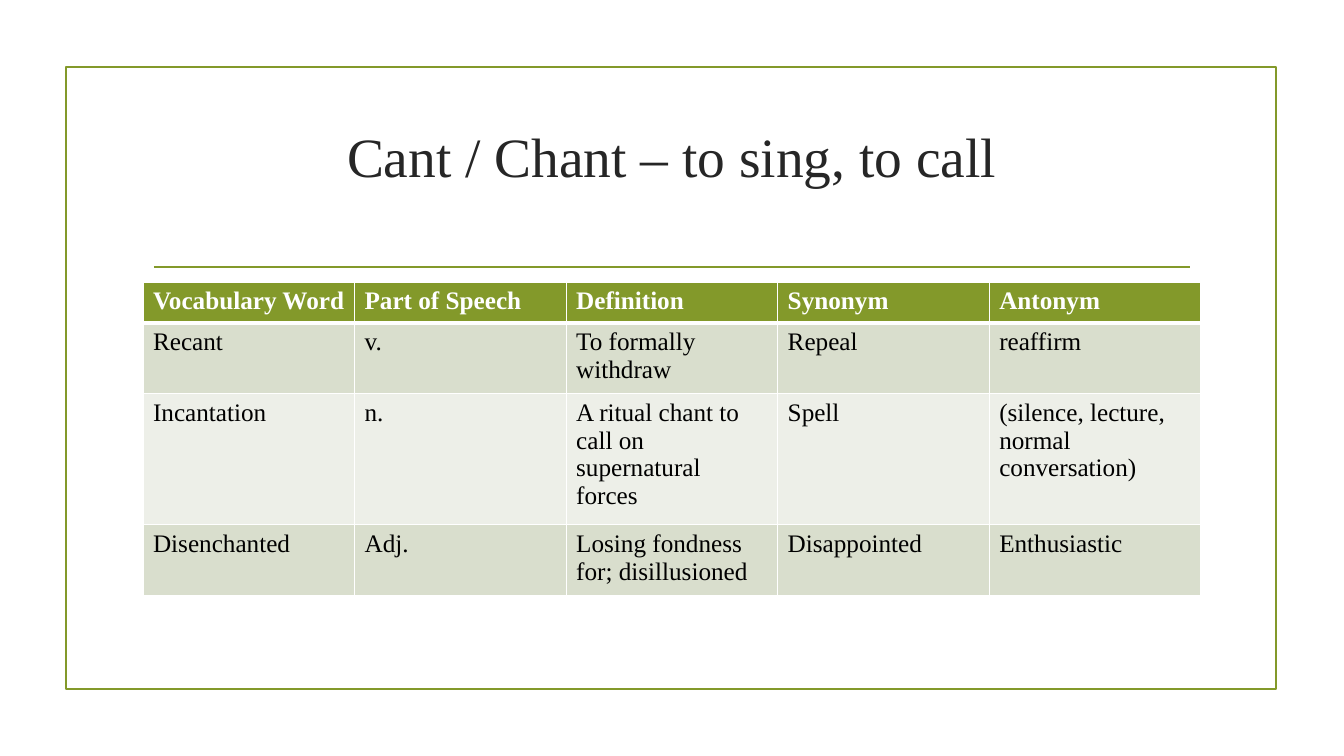
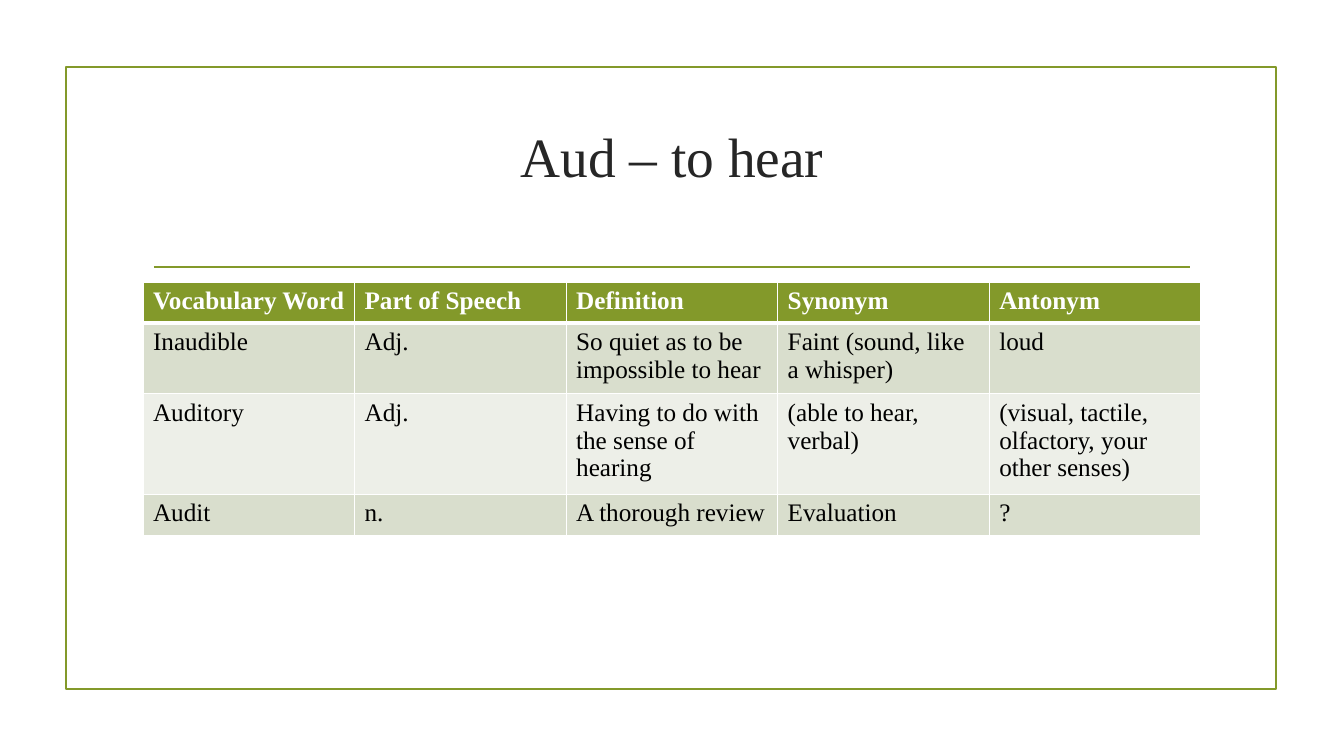
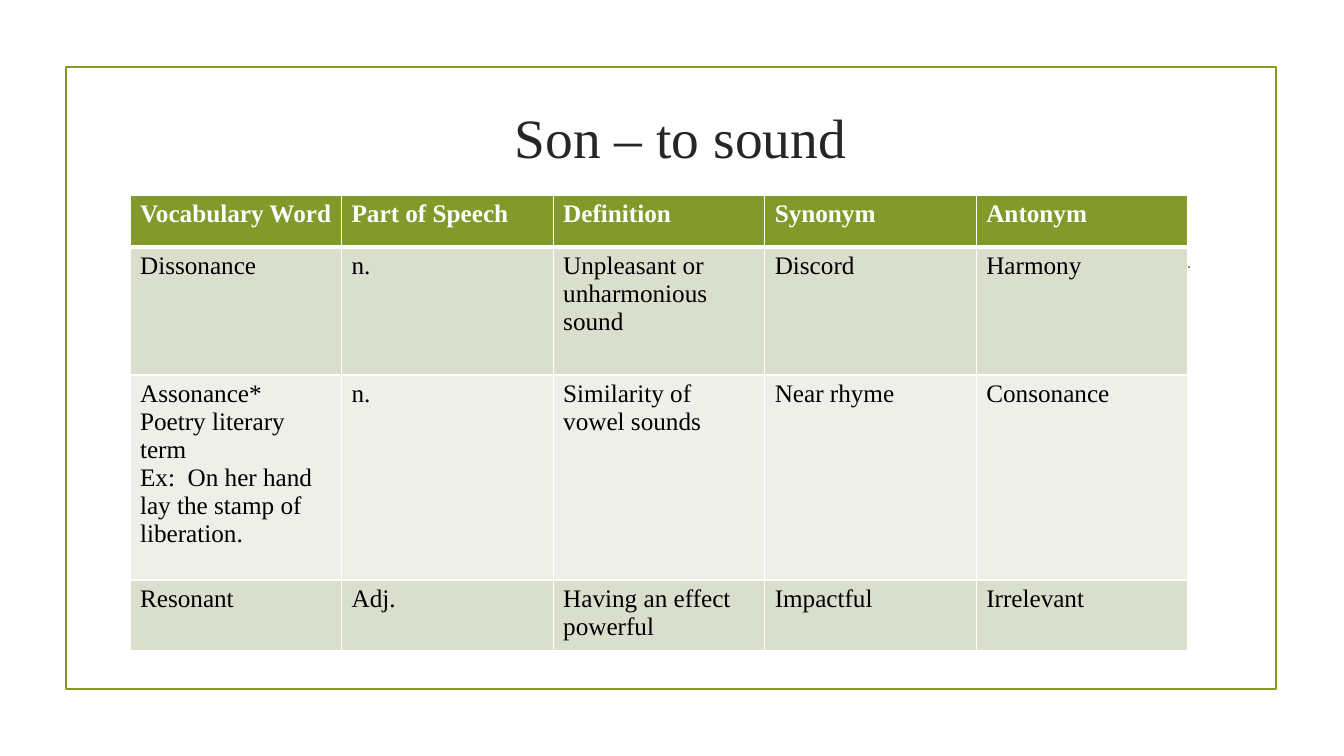
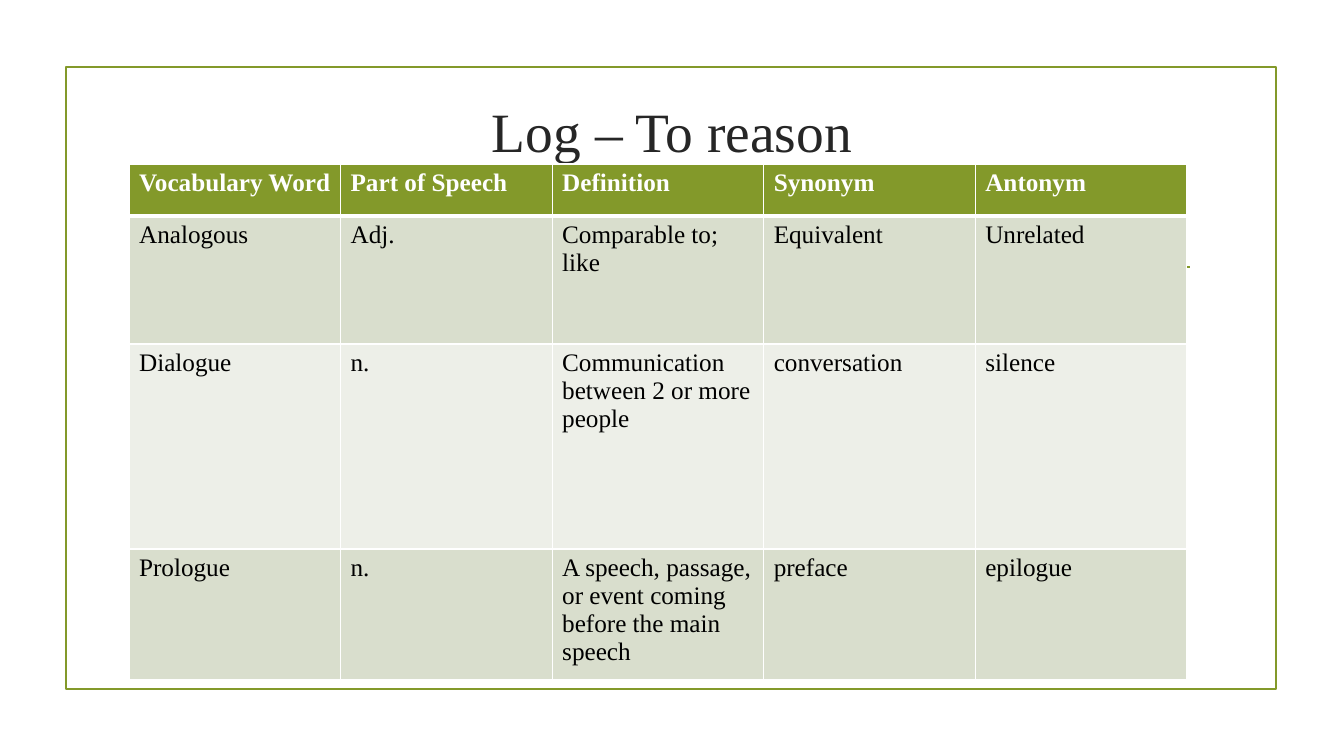
"""Build four vocabulary slides, each with a word root and its table."""
from lxml.etree import SubElement as Sub
from pptx import Presentation
from pptx.dml.color import RGBColor
from pptx.enum.shapes import MSO_CONNECTOR as Link, MSO_SHAPE as Shape
from pptx.enum.text import MSO_ANCHOR as Anchor, PP_ALIGN as Align
from pptx.oxml.ns import qn
from pptx.util import Pt

PX = 914400 / 100.8
FONT = "Times New Roman"
GREEN, WHITE, BLACK, INK = "83992A", "FFFFFF", "000000", "262626"
BANDS = ["D9DECD", "EDEFE8"]
FRAME = (66, 67, 1210, 622)
RULE = (154, 267, 1190, 267)
WIDTH = 1058
HEAD = ["Vocabulary Word", "Part of Speech", "Definition", "Synonym", "Antonym"]
SHORT, TALL = [41, 41, 41, 41], [52, 128, 205, 52]

SLIDES = [
    {"title": "Cant / Chant – to sing, to call", "box": (143, 108, 1058, 144), "inset": 14,
     "table": (143, 282), "heights": SHORT, "rows": [
         ["Recant", "v.", "To formally withdraw", "Repeal", "reaffirm"],
         ["Incantation", "n.", "A ritual chant to call on supernatural forces", "Spell",
          "(silence, lecture, normal conversation)"],
         ["Disenchanted", "Adj.", "Losing fondness for; disillusioned", "Disappointed",
          "Enthusiastic"]]},
    {"title": "Aud – to hear", "box": (143, 108, 1058, 144), "inset": 14,
     "table": (143, 282), "heights": SHORT, "rows": [
         ["Inaudible", "Adj.", "So quiet as to be impossible to hear",
          "Faint (sound, like a whisper)", "loud"],
         ["Auditory", "Adj.", "Having to do with the sense of hearing",
          "(able to hear, verbal)", "(visual, tactile, olfactory, your other senses)"],
         ["Audit", "n.", "A thorough review", "Evaluation", "?"]]},
    {"title": "Son – to sound", "box": (235, 103, 891, 114), "inset": 0,
     "table": (130, 195), "heights": TALL, "rows": [
         ["Dissonance", "n.", "Unpleasant or unharmonious sound", "Discord", "Harmony"],
         ["Assonance*\nPoetry literary term\nEx:  On her hand lay the stamp of liberation.",
          "n.", "Similarity of vowel sounds", "Near rhyme", "Consonance"],
         ["Resonant", "Adj.", "Having an effect powerful", "Impactful", "Irrelevant"]]},
    {"title": "Log – To reason", "box": (143, 83, 1058, 144), "inset": 14,
     "table": (129, 164), "heights": TALL, "rows": [
         ["Analogous", "Adj.", "Comparable to; like", "Equivalent", "Unrelated"],
         ["Dialogue", "n.", "Communication between 2 or more people", "conversation",
          "silence"],
         ["Prologue", "n.", "A speech, passage, or event coming before the main speech",
          "preface", "epilogue"]]},
]


def emu(*sizes):
    return [round(size * PX) for size in sizes]


def rgb(code):
    return RGBColor.from_string(code)


def style(frame, size, color, bold=False, align=Align.LEFT):
    for para in frame.paragraphs:
        para.alignment = align
        font = para.font
        font.name, font.size, font.bold = FONT, Pt(size), bold
        font.color.rgb = rgb(color)


def add_frame(slide):
    rect = slide.shapes.add_shape(Shape.RECTANGLE, *emu(*FRAME))
    rect.shadow.inherit = False
    rect.fill.background()
    rule = slide.shapes.add_connector(Link.STRAIGHT, *emu(*RULE))
    Sub(rule._element.spPr, qn("a:effectLst"))
    for part in (rect, rule):
        part.line.color.rgb = rgb(GREEN)
        part.line.width = Pt(1.25)


def add_title(slide, text, box, inset):
    frame = slide.shapes.add_textbox(*emu(*box)).text_frame
    frame.word_wrap = True
    frame.vertical_anchor = Anchor.TOP
    frame.margin_top = emu(inset)[0]
    frame.text = text
    style(frame, 39.6, INK, align=Align.CENTER)


def add_edges(cell, top, bottom):
    props = cell._tc.get_or_add_tcPr()
    for side, width in (("L", 1), ("R", 1), ("T", top), ("B", bottom)):
        edge = Sub(props, qn("a:ln" + side), w=str(Pt(width)))
        Sub(Sub(edge, qn("a:solidFill")), qn("a:srgbClr"), val=WHITE)


def add_grid(slide, spot, heights, rows):
    rows = [HEAD] + rows
    size = (WIDTH, sum(heights))
    table = slide.shapes.add_table(len(rows), len(HEAD), *emu(*spot, *size)).table
    table.horz_banding = False
    for col in table.columns:
        col.width = emu(WIDTH / len(HEAD))[0]
    for r, (row, height) in enumerate(zip(rows, heights)):
        table.rows[r].height = emu(height)[0]
        head = r == 0
        for c, text in enumerate(row):
            cell = table.cell(r, c)
            add_edges(cell, 3 if r == 1 else 1, 3 if head else 1)
            cell.fill.solid()
            cell.fill.fore_color.rgb = rgb(GREEN if head else BANDS[(r - 1) % 2])
            cell.text = text
            style(cell.text_frame, 18, WHITE if head else BLACK, head)


def main():
    deck = Presentation()
    deck.slide_width, deck.slide_height = emu(1344, 756)
    for page in SLIDES:
        slide = deck.slides.add_slide(deck.slide_layouts[6])
        add_frame(slide)
        add_title(slide, page["title"], page["box"], page["inset"])
        add_grid(slide, page["table"], page["heights"], page["rows"])
    deck.save("out.pptx")


if __name__ == "__main__":
    main()
